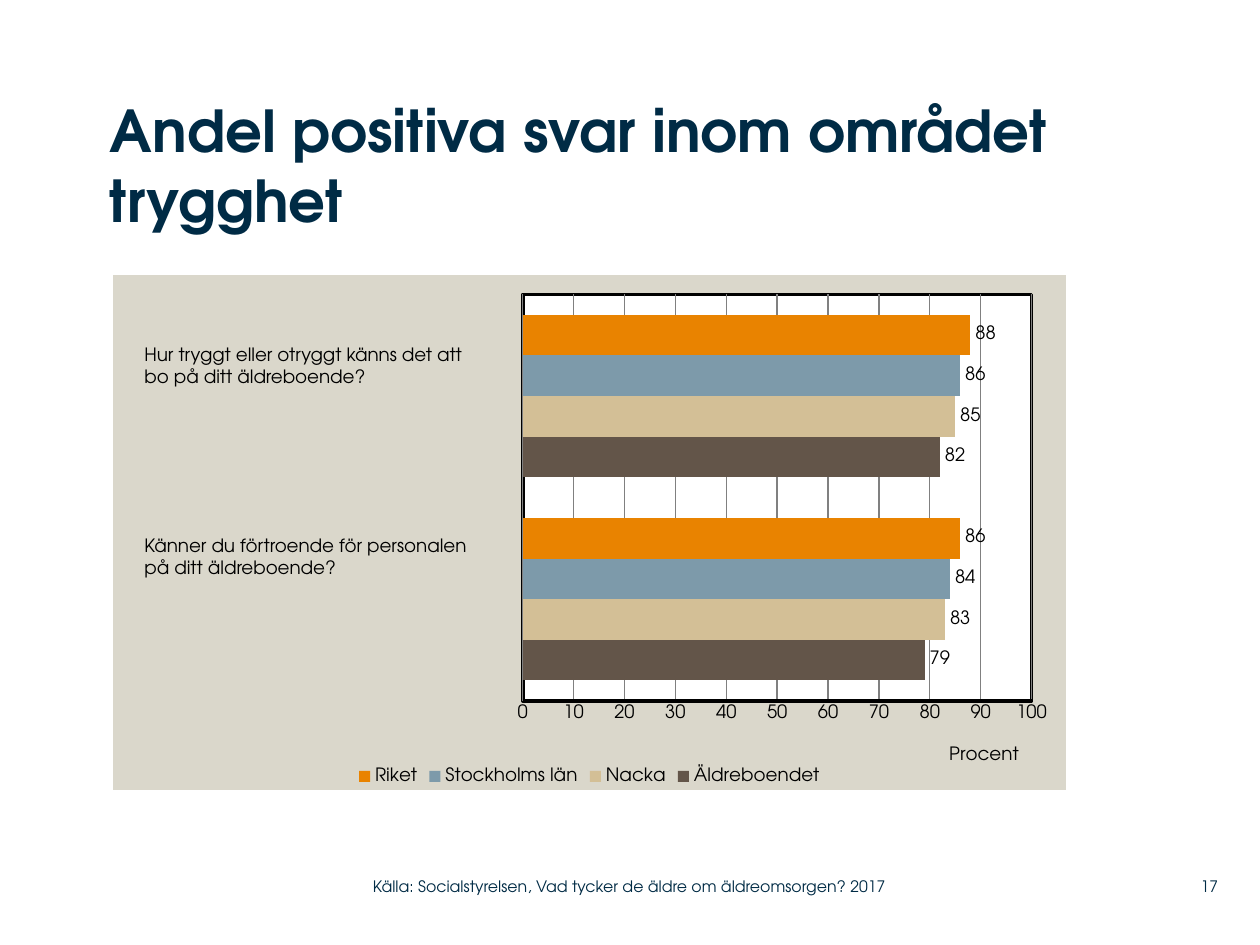
from lxml import etree
from pptx import Presentation
from pptx import util as u
from pptx.chart.data import CategoryChartData
from pptx.dml.color import RGBColor
from pptx.enum import chart as charts, text
from pptx.oxml import parse_xml
from pptx.oxml.ns import nsdecls, qn

# Content
FONT = "TeX Gyre Adventor"
NAVY, BLACK = "002B45", "000000"
TITLE = "Andel positiva svar inom området trygghet"
CATEGORIES = ["1", "2"]
SERIES = [
    ("Äldreboendet", (79, 82), "635549"),
    ("Nacka", (83, 85), "D3BF96"),
    ("Stockholms län", (84, 86), "7D9AAA"),
    ("Riket", (86, 88), "E98300"),
]
# (left, top, width, height) in px, paragraphs
QUESTIONS = [
    ((132, 337, 370, 57), ["Hur tryggt eller otryggt känns det att bo på ditt äldreboende?"]),
    ((132, 528, 370, 57), ["Känner du förtroende för personalen", "på ditt äldreboende?"]),
]
FOOTERS = [
    ((373, 868, 558, 37), "Källa: Socialstyrelsen, Vad tycker de äldre om äldreomsorgen? 2017",
     text.PP_ALIGN.LEFT),
    ((1159, 868, 59, 37), "17", text.PP_ALIGN.RIGHT),
]
CHART_BOX = (113, 275, 953, 515)
TITLE_BOX = (110, 95, 958, 179)
PX = 914400 / 126


def px(*lengths):
    return [u.Emu(round(length * PX)) for length in lengths]


def color(value):
    return RGBColor.from_string(value)


def style(font, size, value=BLACK, bold=False):
    font.name, font.size, font.bold = FONT, u.Pt(size), bold
    font.color.rgb = color(value)


def set_margins(frame):
    frame.margin_left = frame.margin_top = frame.margin_right = frame.margin_bottom = 0


def add_text(slide, box, paragraphs, size, value, align=text.PP_ALIGN.LEFT):
    frame = slide.shapes.add_textbox(*px(*box)).text_frame
    frame.word_wrap = True
    frame.text = "\n".join(paragraphs)
    for paragraph in frame.paragraphs:
        paragraph.alignment = align
        style(paragraph.font, size, value)
    return frame


def manual_layout(parent, **values):
    """Place a chart part by fractions of the chart area."""
    layout = parent.find(qn("c:layout"))
    if layout is None:
        layout = etree.Element(qn("c:layout"))
        parent.insert(0, layout)
    manual = etree.SubElement(layout, qn("c:manualLayout"))
    for tag, value in values.items():
        etree.SubElement(manual, qn("c:" + tag)).set("val", str(value))


def area_fill(fill, line="<a:noFill/>", width=0):
    return parse_xml(
        f'<c:spPr {nsdecls("c", "a")}><a:solidFill><a:srgbClr val="{fill}"/></a:solidFill>'
        f'<a:ln w="{width}">{line}</a:ln></c:spPr>')


presentation = Presentation()
presentation.slide_width, presentation.slide_height = u.Inches(10), u.Inches(7.5)
slide = presentation.slides.add_slide(presentation.slide_layouts[5])

# Title
title = slide.shapes.title
title.left, title.top, title.width, title.height = px(*TITLE_BOX)
frame = title.text_frame
frame.text = TITLE
frame.word_wrap = True
frame.auto_size = text.MSO_AUTO_SIZE.NONE
frame.vertical_anchor = text.MSO_ANCHOR.TOP
set_margins(frame)
frame.paragraphs[0].alignment = text.PP_ALIGN.LEFT
style(frame.paragraphs[0].font, 33, NAVY, bold=True)

# Chart
data = CategoryChartData()
data.categories = CATEGORIES
for name, values, _ in SERIES:
    data.add_series(name, values)
chart = slide.shapes.add_chart(
    charts.XL_CHART_TYPE.BAR_CLUSTERED, *px(*CHART_BOX), data).chart
style(chart.font, 10.5)
chart.has_title = False
chart.has_legend = True
chart.legend.position = charts.XL_LEGEND_POSITION.BOTTOM
chart.legend.include_in_layout = False
style(chart.legend.font, 10.5)

plot = chart.plots[0]
plot.gap_width, plot.overlap = 100, 0
plot.vary_by_categories = False
for series, (_, _, fill) in zip(plot.series, SERIES):
    series.format.fill.solid()
    series.format.fill.fore_color.rgb = color(fill)
    labels = series.data_labels
    labels.show_value = True
    labels.position = charts.XL_LABEL_POSITION.OUTSIDE_END
    style(labels.font, 10.5)

# Axes
chart.category_axis.visible = False
axis = chart.value_axis
axis.minimum_scale, axis.maximum_scale, axis.major_unit = 0, 100, 10
axis.major_tick_mark = axis.minor_tick_mark = charts.XL_TICK_MARK.NONE
axis.format.line.color.rgb = color(BLACK)
axis.format.line.width = u.Pt(2)
axis.major_gridlines.format.line.color.rgb = color("808080")
axis.major_gridlines.format.line.width = u.Pt(0.75)
style(axis.tick_labels.font, 10.5)
axis.axis_title.text_frame.text = "Procent"
style(axis.axis_title.text_frame.paragraphs[0].font, 10.5)
manual_layout(axis.axis_title._element, xMode="edge", yMode="edge", x=0.874, y=0.906)

# Plot area and chart background
chart_space = chart._chartSpace
plot_area = chart_space.chart.plotArea
manual_layout(plot_area, layoutTarget="inner", xMode="edge", yMode="edge",
              x=0.43, y=0.038, w=0.534, h=0.789)
black_line = f'<a:solidFill><a:srgbClr val="{BLACK}"/></a:solidFill>'
plot_area.append(area_fill("FFFFFF", black_line, u.Pt(2)))
chart_space.chart.addnext(area_fill("DAD7CB"))

# Questions beside the bars
for box, paragraphs in QUESTIONS:
    add_text(slide, box, paragraphs, 10.5, BLACK)

# Source and page number
for box, line, align in FOOTERS:
    frame = add_text(slide, box, [line], 9, NAVY, align)
    frame.vertical_anchor = text.MSO_ANCHOR.MIDDLE
    set_margins(frame)

presentation.save("out.pptx")
